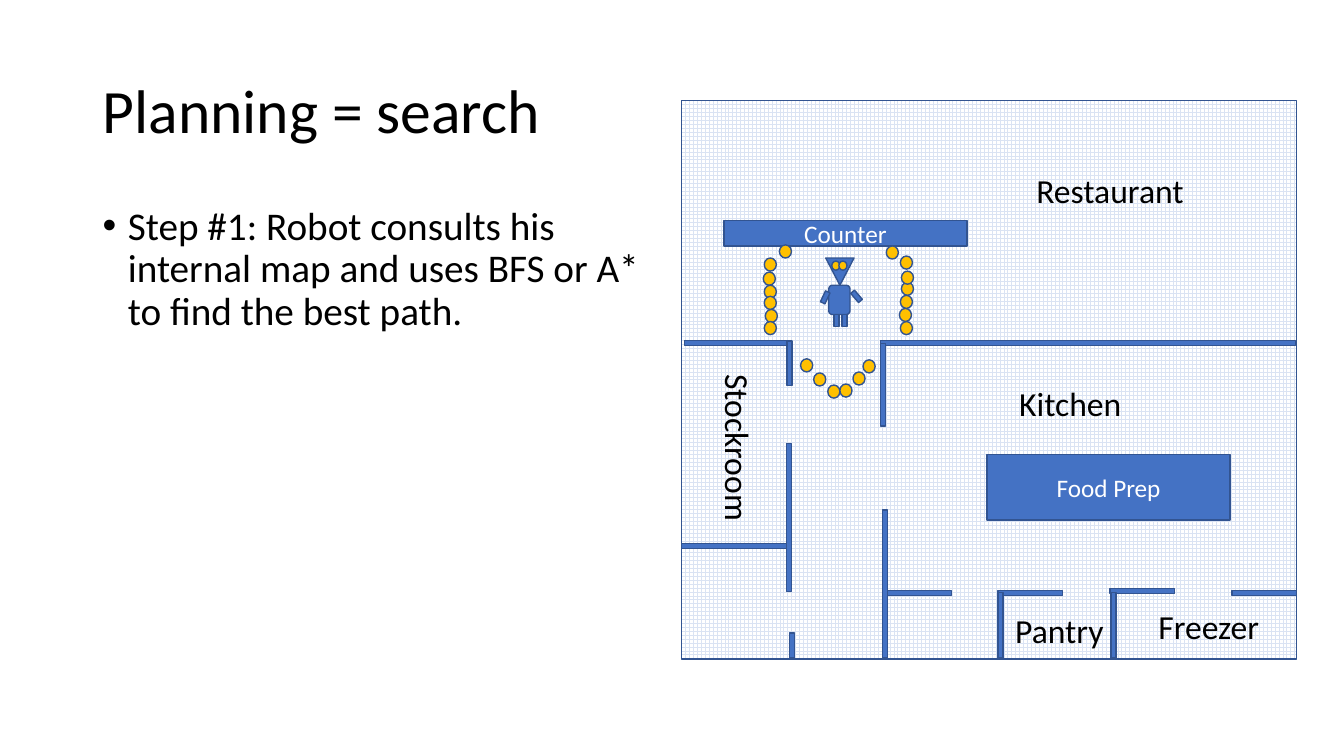
from lxml import etree
from pptx import Presentation
from pptx.dml.color import RGBColor
from pptx.enum.dml import MSO_PATTERN
from pptx.enum.shapes import MSO_SHAPE
from pptx.enum.text import MSO_ANCHOR, PP_ALIGN
from pptx.oxml.ns import qn
from pptx.util import Inches, Pt

RECT, ROUNDED = MSO_SHAPE.RECTANGLE, MSO_SHAPE.ROUNDED_RECTANGLE
OVAL, TRIANGLE = MSO_SHAPE.OVAL, MSO_SHAPE.ISOSCELES_TRIANGLE
TOP, MIDDLE = MSO_ANCHOR.TOP, MSO_ANCHOR.MIDDLE
LEFT, CENTER = PP_ALIGN.LEFT, PP_ALIGN.CENTER
GRID_PATTERN = MSO_PATTERN.LARGE_GRID

COLORS = {"text": "000000", "paper": "FFFFFF", "grid": "DAE3F3",
          "wall": "4472C4", "edge": "325491", "coin": "FFC000"}
FONT = "Calibri"
MAP_COLUMNS = 61  # floor plan cells across
WALL = 0.5  # wall thickness in cells

# Walls in map cells: column, row, length
HORIZONTAL_WALLS = [(0.3, 23.8, 10.6), (19.7, 23.8, 41.2), (20.4, 48.6, 6.4),
                    (31.4, 48.6, 6.4), (42.5, 48.4, 6.4), (54.6, 48.6, 6.4),
                    (0, 43.9, 10.4)]
VERTICAL_WALLS = [(19.75, 24.05, 8.2), (19.9, 40.6, 14.7), (31.4, 48.8, 6.5),
                  (42.6, 48.8, 6.5), (10.4, 34, 14.7), (10.45, 23.85, 4.4),
                  (10.7, 52.8, 2.5)]
FURNITURE = [("Counter", (4.2, 11.9, 24.1, 2.5)),
             ("Food Prep", (30.3, 35.1, 24.1, 6.5))]
ROOMS = [("Kitchen", (32.5, 27.5, 12.3, 5), 0),
         ("Restaurant", (34.2, 6.4, 16.8, 5), 0),
         ("Freezer", (46.3, 49.6, 12.1, 5), 0),
         ("Pantry", (32.1, 50, 10.9, 5), 0),
         ("Stockroom", (-2.7, 32, 16.7, 5), 90)]
# Path markers: column, row
PATH_DOTS = [(8.2, 15.6), (8.1, 17), (8.2, 18.3), (8.2, 19.4), (8.3, 20.7),
             (8.2, 21.9), (11.8, 25.6), (18, 25.7), (21.7, 21.9), (21.6, 20.6),
             (21.7, 19.3), (21.8, 18), (21.8, 16.9), (21.7, 15.4), (9.7, 14.3),
             (20.3, 14.4), (13.1, 27), (17, 26.9), (14.5, 28.2), (15.7, 28.1)]
ROBOT_CELL = (14, 15.6)
# Robot parts in cells from its corner: kind, box, rotation, colour
ROBOT_PARTS = [(TRIANGLE, (0.3, 0, 2.8, 2.7), 180, "wall"),
               (OVAL, (0.9, 0.3, 0.8, 0.9), 0, "coin"),
               (OVAL, (1.6, 0.3, 0.8, 0.9), 0, "coin"),
               (ROUNDED, (0.6, 2.7, 2.1, 2.9), 0, "wall"),
               (RECT, (1.1, 5.6, 0.5, 1.2), 0, "wall"),
               (RECT, (1.9, 5.6, 0.5, 1.2), 0, "wall"),
               (RECT, (3.1, 3.2, 0.5, 1.2), 319.4, "wall"),
               (RECT, (0, 3.3, 0.5, 1.2), 24.9, "wall")]


def color(name):
    return RGBColor.from_string(COLORS[name])


def write(shape, text, size, ink="text", align=LEFT, **frame_format):
    frame = shape.text_frame
    for key, value in {"word_wrap": True, **frame_format}.items():
        setattr(frame, key, value)
    paragraph = frame.paragraphs[0]
    paragraph.alignment = align
    run = paragraph.add_run()
    run.text = text
    for key, value in {"name": FONT, "size": Pt(size)}.items():
        setattr(run.font, key, value)
    run.font.color.rgb = color(ink)
    return paragraph


def add_figure(shapes, kind, box, fill="wall", rotation=0):
    figure = shapes.add_shape(kind, *map(Inches, box))
    figure.rotation = rotation
    figure.shadow.inherit = False
    figure.fill.solid()
    figure.fill.fore_color.rgb = color(fill)
    figure.line.color.rgb = color("edge")
    figure.line.width = Pt(1)
    return figure


def add_statement(slide, box):
    """Title over one bulleted step."""
    left, top, width, height = box
    title = slide.shapes.add_textbox(
        *map(Inches, (left, top, width * 0.89, height * 0.23)))
    heading = write(title, "Planning = search", 44, vertical_anchor=MIDDLE)
    heading.line_spacing = 0.9

    step = slide.shapes.add_textbox(
        *map(Inches, (left, top + 1.6, width, height - 1.6)))
    bullet = write(step, "Step #1: Robot consults his internal map and uses "
                   "BFS or A* to find the best path.", 28, vertical_anchor=TOP)
    bullet.line_spacing = 0.9
    bullet.space_before = Pt(10)
    properties = bullet._p.get_or_add_pPr()
    properties.set("marL", str(Inches(0.25)))
    properties.set("indent", str(-Inches(0.25)))
    etree.SubElement(properties, qn("a:buFont")).set("typeface", "Arial")
    etree.SubElement(properties, qn("a:buChar")).set("char", "•")


def add_floor_plan(slide, box):
    """Restaurant map, laid out in square cells from the box's corner."""
    left, top, width, _ = box
    cell = width / MAP_COLUMNS
    shapes = slide.shapes

    def cells(column, row, columns, rows):
        return (left + column * cell, top + row * cell,
                columns * cell, rows * cell)

    # Squared floor
    floor = add_figure(shapes, RECT, box)
    floor.fill.patterned()
    floor.fill.pattern = GRID_PATTERN
    floor.fill.fore_color.rgb = color("grid")
    floor.fill.back_color.rgb = color("paper")

    # Robot
    robot = shapes.add_group_shape()
    robot_column, robot_row = ROBOT_CELL
    for kind, (column, row, *size), rotation, fill in ROBOT_PARTS:
        part_box = cells(robot_column + column, robot_row + row, *size)
        add_figure(robot.shapes, kind, part_box, fill, rotation)

    # Walls and furniture
    for column, row, length in HORIZONTAL_WALLS:
        add_figure(shapes, RECT, cells(column, row, length, WALL))
    for column, row, length in VERTICAL_WALLS:
        add_figure(shapes, RECT, cells(column, row, WALL, length))
    for label, place in FURNITURE:
        write(add_figure(shapes, RECT, cells(*place)), label, 18, "paper",
              CENTER, vertical_anchor=MIDDLE)

    # Room names
    for label, place, rotation in ROOMS:
        room = shapes.add_textbox(*map(Inches, cells(*place)))
        room.rotation = rotation
        write(room, label, 24, word_wrap=False)

    # Path
    for column, row in PATH_DOTS:
        add_figure(shapes, OVAL, cells(column, row, 1.2, 1.3), "coin")


def main():
    deck = Presentation()
    deck.slide_width, deck.slide_height = Inches(13.33), Inches(7.5)
    slide = deck.slides.add_slide(deck.slide_layouts[6])
    add_statement(slide, (0.92, 0.4, 5.67, 6.36))
    add_floor_plan(slide, (6.76, 1, 6.1, 5.54))
    deck.save("out.pptx")


if __name__ == "__main__":
    main()
